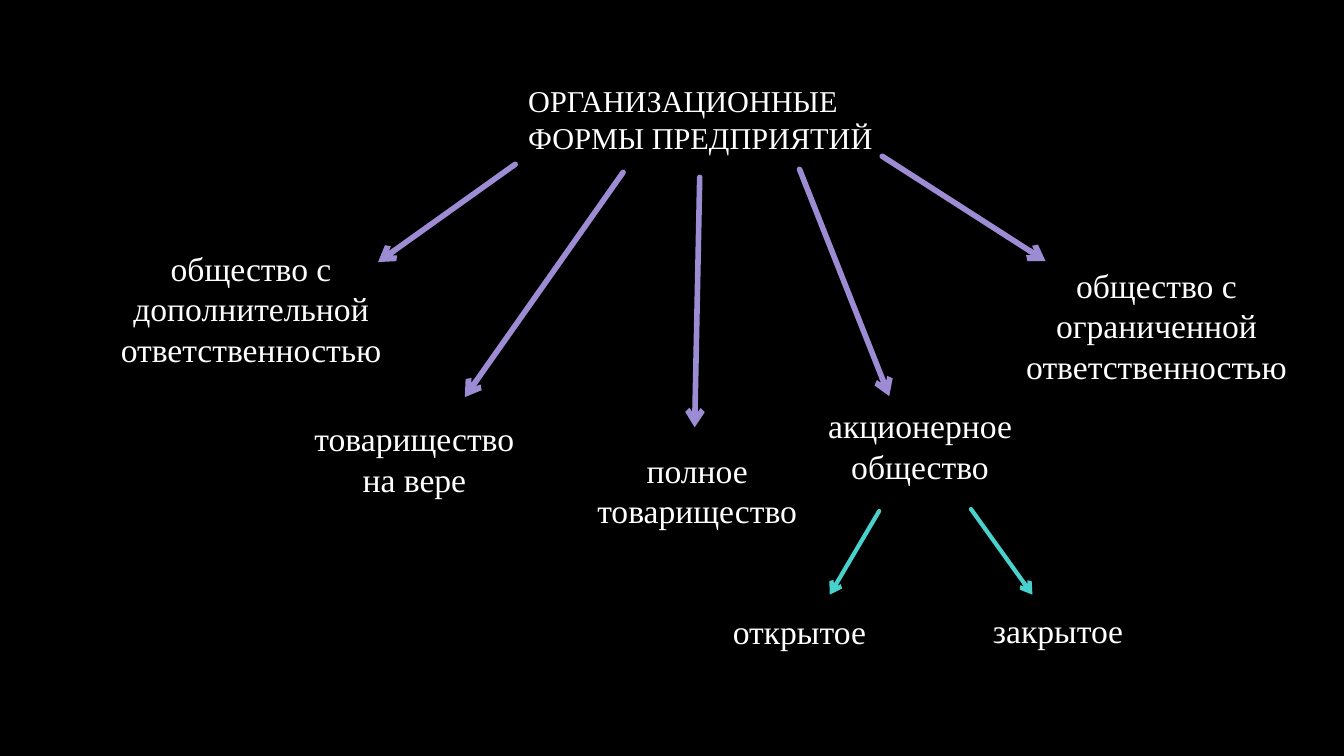
from lxml.etree import SubElement
from pptx import Presentation
from pptx.dml.color import RGBColor
from pptx.enum.shapes import MSO_CONNECTOR
from pptx.enum.text import MSO_ANCHOR, MSO_AUTO_SIZE, PP_ALIGN
from pptx.oxml.ns import qn
from pptx.util import Inches, Pt

TITLE = ("ОРГАНИЗАЦИОННЫЕ ФОРМЫ ПРЕДПРИЯТИЙ", (5.14, 0.75, 3.75, 1.36))

# text, (left, top, width, height)
FORMS = [
    ("полное товарищество", (5.76, 4.41, 2.31, 0.91)),
    ("товарищество на вере", (2.98, 4.10, 2.26, 0.91)),
    ("общество с ограниченной ответственностью", (9.77, 2.58, 3.40, 1.31)),
    ("общество с дополнительной ответственностью", (0.62, 2.41, 3.74, 1.31)),
    ("акционерное общество", (7.79, 3.97, 2.67, 0.91)),
]
COMPANY_TYPES = [
    ("открытое", (7.17, 6.01, 1.54, 0.50)),
    ("закрытое", (9.75, 6.00, 1.53, 0.50)),
]

# (from x, from y, to x, to y)
FORM_ARROWS = [
    (5.11, 1.63, 3.75, 2.60),
    (6.18, 1.71, 4.61, 3.94),
    (6.94, 1.76, 6.89, 4.24),
    (7.93, 1.68, 8.82, 3.93),
    (8.75, 1.55, 10.37, 2.59),
]
TYPE_ARROWS = [
    (8.72, 5.07, 8.23, 5.90),
    (9.63, 5.05, 10.24, 5.90),
]

THEME = {
    "background": RGBColor.from_string("000000"),
    "text": RGBColor.from_string("FFFFFF"),
    "form_arrow": RGBColor.from_string("9D8CD3"),
    "type_arrow": RGBColor.from_string("49D1CD"),
    "font": "Times New Roman",
    "title_size": Pt(21.6),
    "label_size": Pt(24),
    "form_weight": Pt(4),
    "type_weight": Pt(3),
}

TITLE_FRAME = {"word_wrap": True, "vertical_anchor": MSO_ANCHOR.TOP,
               "margin_top": Inches(0.07)}
FORM_FRAME = {"word_wrap": True, "auto_size": MSO_AUTO_SIZE.SHAPE_TO_FIT_TEXT}
TYPE_FRAME = {"word_wrap": False, "auto_size": MSO_AUTO_SIZE.SHAPE_TO_FIT_TEXT}


def set_values(target, values):
    for name, value in values.items():
        setattr(target, name, value)


def add_label(page, text, place, size, frame_values, alignment):
    box = page.shapes.add_textbox(*map(Inches, place))
    frame = box.text_frame
    set_values(frame, frame_values)
    para = frame.paragraphs[0]
    para.alignment = alignment
    span = para.add_run()
    span.text = text
    set_values(span.font, {"name": THEME["font"], "size": size})
    span.font.color.rgb = THEME["text"]


def add_arrow(page, ends, color, weight):
    arrow = page.shapes.add_connector(MSO_CONNECTOR.STRAIGHT, *map(Inches, ends))
    arrow.line.color.rgb = color
    arrow.line.width = weight
    properties = arrow.line._get_or_add_ln()
    properties.set("cap", "rnd")
    SubElement(properties, qn("a:round"))
    SubElement(properties, qn("a:tailEnd"), type="arrow")
    SubElement(arrow._element.spPr, qn("a:effectLst"))


def main():
    deck = Presentation()
    set_values(deck, {"slide_width": Inches(13.33), "slide_height": Inches(7.5)})
    page = deck.slides.add_slide(deck.slide_layouts[6])
    page.background.fill.solid()
    page.background.fill.fore_color.rgb = THEME["background"]

    add_label(page, *TITLE, THEME["title_size"], TITLE_FRAME, PP_ALIGN.LEFT)
    for ends in FORM_ARROWS:
        add_arrow(page, ends, THEME["form_arrow"], THEME["form_weight"])
    for text, place in FORMS:
        add_label(page, text, place, THEME["label_size"], FORM_FRAME, PP_ALIGN.CENTER)
    for ends in TYPE_ARROWS:
        add_arrow(page, ends, THEME["type_arrow"], THEME["type_weight"])
    for text, place in COMPANY_TYPES:
        add_label(page, text, place, THEME["label_size"], TYPE_FRAME, PP_ALIGN.LEFT)

    deck.save("out.pptx")


if __name__ == "__main__":
    main()
